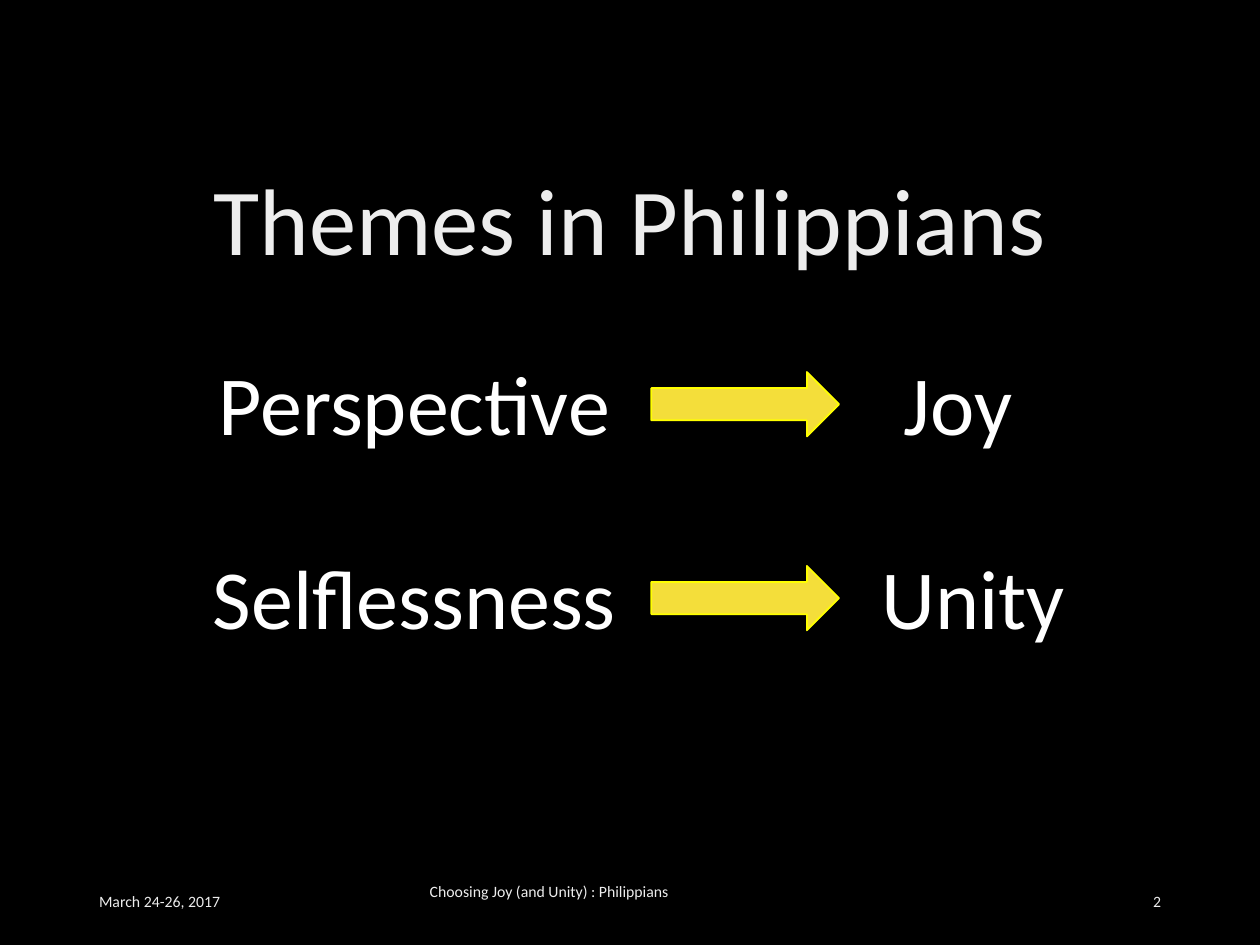
import pptx
import pptx.util
import pptx.dml.color
import pptx.enum.shapes
import pptx.enum.text

Pt = pptx.util.Pt
RGBColor = pptx.dml.color.RGBColor
Align = pptx.enum.text.PP_ALIGN
Anchor = pptx.enum.text.MSO_ANCHOR
AutoSize = pptx.enum.text.MSO_AUTO_SIZE

BLACK = RGBColor(0x00, 0x00, 0x00)
WHITE = RGBColor(0xFF, 0xFF, 0xFF)
SILVER = RGBColor(0xED, 0xED, 0xED)
GOLD = RGBColor(0xF4, 0xDE, 0x3A)
YELLOW = RGBColor(0xFF, 0xFF, 0x00)
FONT = "Calibri"

# Each theme: cause, cause width, effect, effect centre from row left, effect width
THEMES = [
    ("Perspective", 242, "Joy", 437.6, 78.5),
    ("Selflessness", 252, "Unity", 446.2, 120),
]


def write(frame, text, size, color, align):
    paragraph = frame.paragraphs[0]
    paragraph.alignment = align
    run = paragraph.add_run()
    run.text = text
    run.font.name = FONT
    run.font.size = Pt(size)
    run.font.color.rgb = color
    return paragraph


def add_title(slide, left, top, width, height):
    title = slide.shapes.title
    title.left, title.top = Pt(left), Pt(top)
    title.width, title.height = Pt(width), Pt(height)
    frame = title.text_frame
    frame.auto_size = AutoSize.NONE
    frame.vertical_anchor = Anchor.MIDDLE
    heading = write(frame, "Themes in Philippians", 54, SILVER, Align.CENTER)
    heading.line_spacing = 0.9


def add_word(slide, text, center, top, width, height):
    word = slide.shapes.add_textbox(Pt(center - width / 2), Pt(top), Pt(width), Pt(height))
    frame = word.text_frame
    frame.word_wrap = False
    frame.auto_size = AutoSize.SHAPE_TO_FIT_TEXT
    frame.margin_left = frame.margin_right = Pt(5.4)
    frame.margin_top = frame.margin_bottom = Pt(2.7)
    write(frame, text, 48, WHITE, Align.CENTER)


def add_theme(slide, theme, left, top, height):
    """Place a cause, an arrow and its effect in one row."""
    cause, cause_width, effect, effect_center, effect_width = theme
    add_word(slide, cause, left + 126.9, top, cause_width, height)
    add_word(slide, effect, left + effect_center, top, effect_width, height)
    arrow = slide.shapes.add_shape(
        pptx.enum.shapes.MSO_SHAPE.RIGHT_ARROW,
        Pt(left + 262.2), Pt(top + 14.6), Pt(107.3), Pt(36.8))
    arrow.shadow.inherit = False
    arrow.fill.solid()
    arrow.fill.fore_color.rgb = GOLD
    arrow.line.color.rgb = YELLOW
    arrow.line.width = Pt(1)


def add_footer(slide, left, top, width, height):
    """Place the date, the series name and the page number along the bottom."""
    side_width, series_width = 162, 243.4

    def add_part(text, part_left, part_width, align):
        part = slide.shapes.add_textbox(Pt(part_left), Pt(top), Pt(part_width), Pt(height))
        frame = part.text_frame
        frame.word_wrap = True
        frame.vertical_anchor = Anchor.MIDDLE
        write(frame, text, 9, SILVER, align)
        return frame

    add_part("March 24-26, 2017", left, side_width, Align.LEFT)
    series = add_part("Choosing Joy (and Unity) : Philippians",
                      left + (width - series_width) / 2, series_width, Align.CENTER)
    series.margin_left, series.margin_right = Pt(0), Pt(92.6)
    series.margin_bottom = Pt(15)
    add_part("2", left + width - side_width, side_width, Align.RIGHT)


def main():
    deck = pptx.Presentation()
    deck.slide_width, deck.slide_height = Pt(720), Pt(540)
    slide = deck.slides.add_slide(deck.slide_layouts[5])
    slide.background.fill.solid()
    slide.background.fill.fore_color.rgb = BLACK

    add_title(slide, 49.5, 89.5, 621, 78.5)
    for row, theme in enumerate(THEMES):
        add_theme(slide, theme, 110, 198 + row * 110.8, 63.4)
    add_footer(slide, 49.5, 500.5, 621, 28.8)
    deck.save("out.pptx")


if __name__ == "__main__":
    main()
